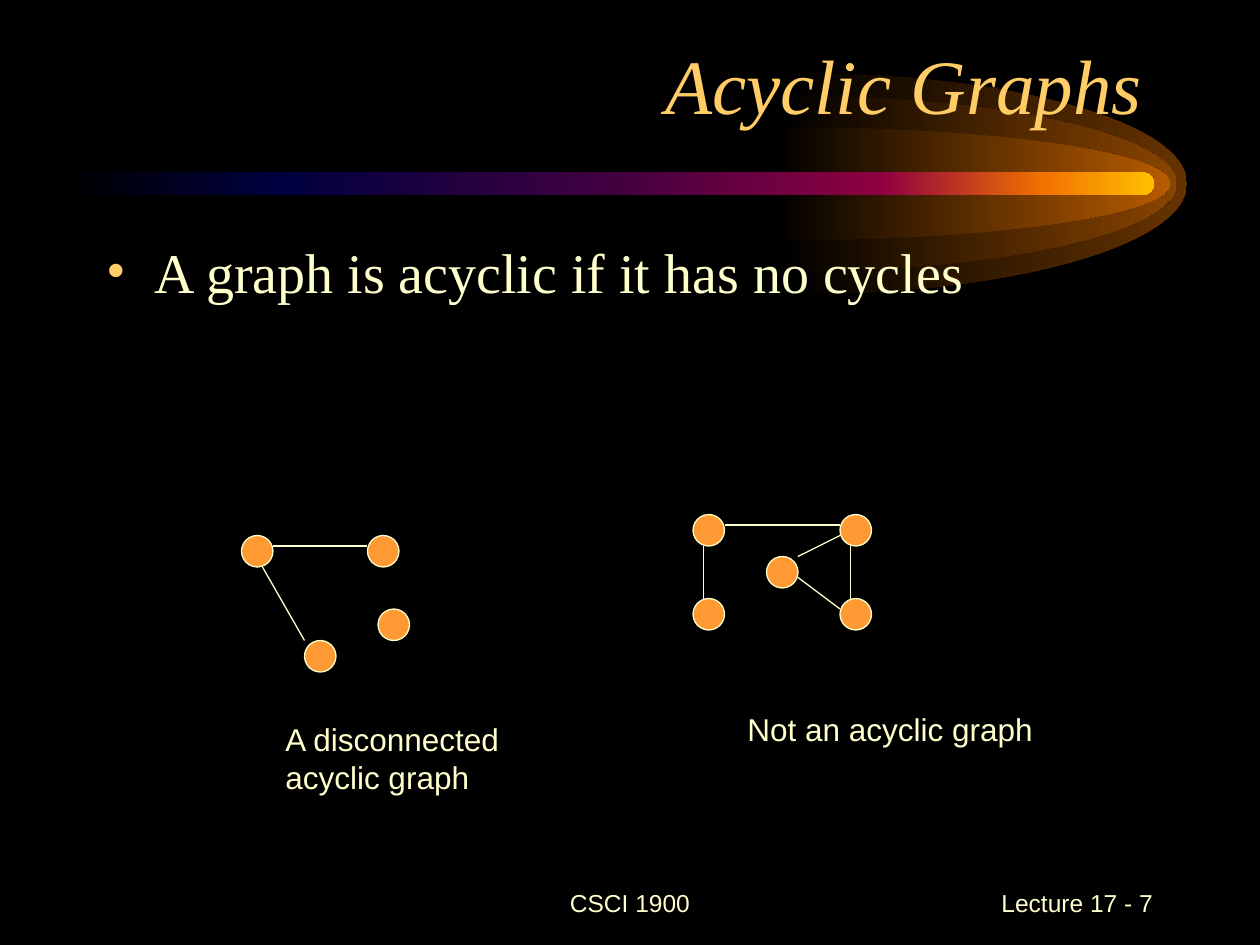
from dataclasses import dataclass

from lxml import etree
from pptx import Presentation
from pptx import util as u
from pptx.dml.color import RGBColor
from pptx.enum import shapes, text
from pptx.oxml.ns import qn

COLORS = {
    "background": "000000",
    "title": "FFCC66",
    "text": "FFFFCC",
    "node": "FF9933",
}
GRID = 12  # units to the inch for nodes, edges and labels
NODE_SIZE = 3
FLARE_Y = 17.5 / GRID


@dataclass
class Flare:
    """Lengths in inches."""
    x: float
    radius_y: float
    color: str


@dataclass
class Label:
    """The box is left, top, width and height in grid units."""
    text: str
    box: tuple[float, float, float, float]
    size: int = 18
    font: str = "Arial"
    align: text.PP_ALIGN = text.PP_ALIGN.LEFT
    anchor: text.MSO_ANCHOR = text.MSO_ANCHOR.TOP


@dataclass
class Graph:
    """Node corners and edge ends in grid units."""
    nodes: list[tuple[int, int]]
    edges: list[tuple[int, int, int, int]]


FLARES = [
    Flare(6.29, 0.88, "663300"),
    Flare(6.21, 0.7, "894400"),
    Flare(6.16, 0.45, "B75B00"),
]
BAR_STOPS = [(0, "000000"), (20, "000040"), (50, "400040"),
             (75, "8F0040"), (90, "F27300"), (100, "FFBF00")]

GRAPHS = [
    Graph(  # disconnected and acyclic
        nodes=[(23, 51), (35, 51), (29, 61), (36, 58)],
        edges=[(25, 54, 29, 61), (26, 52, 35, 52)],
    ),
    Graph(  # contains a cycle
        nodes=[(66, 49), (80, 49), (66, 57), (80, 57), (73, 53)],
        edges=[(69, 50, 80, 50), (81, 52, 81, 57), (67, 57, 67, 52),
               (76, 55, 80, 58), (76, 53, 80, 51)],
    ),
]

LABELS = [
    Label("CSCI 1900", (41, 83, 38, 6), 14,
          align=text.PP_ALIGN.CENTER, anchor=text.MSO_ANCHOR.MIDDLE),
    Label("Lecture 17 - 7", (86, 83, 25, 6), 14,
          align=text.PP_ALIGN.RIGHT, anchor=text.MSO_ANCHOR.MIDDLE),
    Label("A disconnected acyclic graph", (26, 68, 25, 8.4)),
    Label("Not an acyclic graph", (70, 67, 36, 4.8)),
]
TITLE = Label("Acyclic Graphs", (8, 3, 102, 10), 44, "Times New Roman",
              text.PP_ALIGN.RIGHT, text.MSO_ANCHOR.BOTTOM)
BODY = Label("A graph is acyclic if it has no cycles", (9, 22, 102, 59),
             32, "Times New Roman")


def rgb(name: str) -> RGBColor:
    return RGBColor.from_string(COLORS[name])


def inches(values) -> list[u.Length]:
    return [u.Inches(v) for v in values]


def grid(values) -> list[u.Length]:
    return inches(v / GRID for v in values)


def fill_gradient(sp, stops: list[tuple[int, str]]) -> None:
    """Fill from left to right, without outline or shadow."""
    sp.shadow.inherit = False
    sp.line.fill.background()
    sp.fill.gradient()
    sp.fill.gradient_angle = 0
    stop_list = sp._element.spPr.find(".//" + qn("a:gsLst"))
    for stop in list(stop_list):
        stop_list.remove(stop)
    for position, color in stops:
        stop = etree.SubElement(stop_list, qn("a:gs"), pos=str(position * 1000))
        etree.SubElement(stop, qn("a:srgbClr"), val=color)


def round_corners(sp) -> None:
    """Turn the two straight sides of a triangle into quarter ellipses."""
    w, h, k = sp.width, sp.height / 2, 0.5523
    curves = [
        [(k * w, 0), (w, h - k * h), (w, h)],
        [(w, h + k * h), (k * w, 2 * h), (0, 2 * h)],
    ]
    sides = list(sp._element.spPr.iter(qn("a:lnTo")))
    for side, points in zip(sides, curves):
        curve = etree.Element(qn("a:cubicBezTo"))
        for x, y in points:
            etree.SubElement(curve, qn("a:pt"), x=str(round(x)), y=str(round(y)))
        side.getparent().replace(side, curve)


def add_flare(s, flare: Flare, radius_x: float = 3.13) -> None:
    """Draw the right half of an ellipse."""
    top, tip, bottom = (inches(point) for point in (
        (flare.x, FLARE_Y - flare.radius_y),
        (flare.x + radius_x, FLARE_Y),
        (flare.x, FLARE_Y + flare.radius_y)))
    builder = s.shapes.build_freeform(*top)
    builder.add_line_segments([tip, bottom], close=False)
    sp = builder.convert_to_shape()
    round_corners(sp)
    fill_gradient(sp, [(0, COLORS["background"]), (100, flare.color)])


def add_node(s, x: int, y: int) -> None:
    sp = s.shapes.add_shape(shapes.MSO_SHAPE.OVAL,
                            *grid((x, y, NODE_SIZE, NODE_SIZE)))
    sp.shadow.inherit = False
    sp.fill.solid()
    sp.fill.fore_color.rgb = rgb("node")
    sp.line.color.rgb = rgb("text")
    sp.line.width = u.Pt(0.75)


def add_edge(s, edge: tuple[int, int, int, int]) -> None:
    line = s.shapes.add_connector(shapes.MSO_CONNECTOR.STRAIGHT, *grid(edge))
    line.line.color.rgb = rgb("text")
    line.line.width = u.Pt(0.75)
    etree.SubElement(line._element.spPr, qn("a:effectLst"))


def write_label(sp, label: Label, color: str = "text", italic: bool = False):
    sp.left, sp.top, sp.width, sp.height = grid(label.box)
    tf = sp.text_frame
    tf.text = label.text
    tf.word_wrap = True
    tf.auto_size = text.MSO_AUTO_SIZE.NONE
    tf.vertical_anchor = label.anchor
    p = tf.paragraphs[0]
    p.alignment = label.align
    font = p.runs[0].font
    font.name, font.size, font.italic = label.font, u.Pt(label.size), italic
    font.color.rgb = rgb(color)
    return p


def add_label(s, label: Label):
    return write_label(s.shapes.add_textbox(*grid(label.box)), label)


def add_bullet(p, font: str, indent: float = 0.38) -> None:
    pPr = p._p.get_or_add_pPr()
    pPr.set("marL", str(u.Inches(indent)))
    pPr.set("indent", str(-u.Inches(indent)))
    color = etree.SubElement(pPr, qn("a:buClr"))
    etree.SubElement(color, qn("a:srgbClr"), val=COLORS["title"])
    etree.SubElement(pPr, qn("a:buFont"), typeface=font)
    etree.SubElement(pPr, qn("a:buChar"), char="•")


def main() -> None:
    prs = Presentation()
    prs.slide_width, prs.slide_height = inches((10, 7.5))
    s = prs.slides.add_slide(prs.slide_layouts[5])
    s.background.fill.solid()
    s.background.fill.fore_color.rgb = rgb("background")

    # Comet behind the title
    for flare in FLARES:
        add_flare(s, flare)
    bar = s.shapes.add_shape(shapes.MSO_SHAPE.ROUNDED_RECTANGLE,
                             *inches((0.5, FLARE_Y - 0.09, 8.66, 0.18)))
    bar.adjustments[0] = 0.5
    fill_gradient(bar, BAR_STOPS)

    # Title, brought in front of the comet
    title = s.shapes.title
    write_label(title, TITLE, "title", italic=True)
    s.shapes._spTree.append(title._element)

    # Graphs
    for graph in GRAPHS:
        for node in graph.nodes:
            add_node(s, *node)
        for edge in graph.edges:
            add_edge(s, edge)

    # Captions, footer and bullet
    for label in LABELS:
        add_label(s, label)
    add_bullet(add_label(s, BODY), BODY.font)

    prs.save("out.pptx")


if __name__ == "__main__":
    main()
